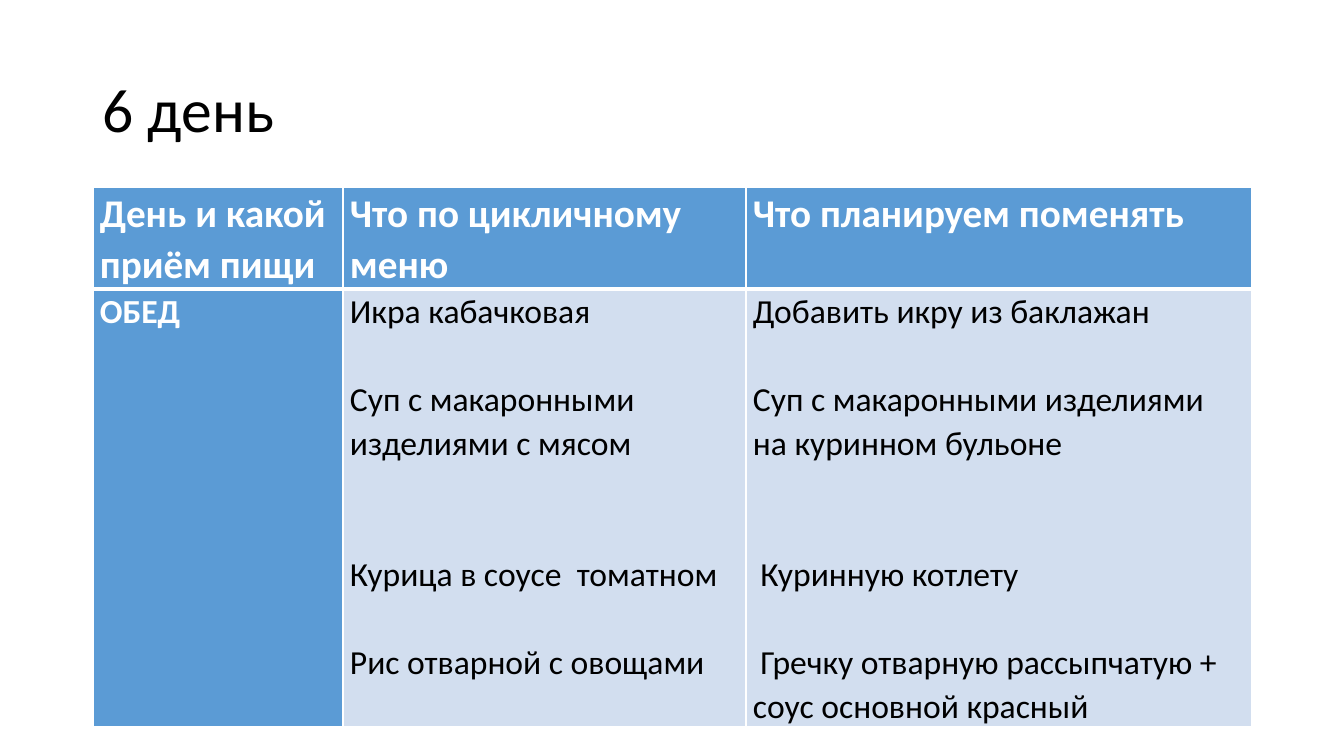
from lxml.etree import SubElement
from pptx import Presentation
from pptx.dml.color import RGBColor
from pptx.enum.text import MSO_ANCHOR as ANCHOR
from pptx.oxml.ns import qn
from pptx.util import Pt

EMU_PER_PX = 914400 / 100.8
BLACK = RGBColor(0x00, 0x00, 0x00)
WHITE = RGBColor(0xFF, 0xFF, 0xFF)
BLUE = RGBColor(0x5B, 0x9B, 0xD5)
PALE = RGBColor(0xD2, 0xDE, 0xEF)

HEADER = {"size": Pt(28), "bold": True, "color": WHITE}
MEAL = {"size": Pt(24), "bold": True, "color": WHITE}
DISH = {"size": Pt(24), "bold": False, "color": BLACK}
LINE_PT = 31.35  # one 24 pt line at 1.07 spacing
INDENT_PT = 5.4  # first-line indent of the last dishes


def px(n):
    return round(n * EMU_PER_PX)


def write(p, text, size, bold, color, spacing=1.07):
    p.line_spacing = spacing
    r = p.add_run()
    r.text = text
    for name, value in {"name": "Calibri", "size": size, "bold": bold}.items():
        setattr(r.font, name, value)
    r.font.color.rgb = color


prs = Presentation()
prs.slide_width, prs.slide_height = px(1344), px(756)
s = prs.slides.add_slide(prs.slide_layouts[6])

# Title
tf = s.shapes.add_textbox(px(93), px(40), px(1159), px(146)).text_frame
tf.word_wrap = True
tf.vertical_anchor = ANCHOR.MIDDLE
write(tf.paragraphs[0], "6 день", Pt(44), False, BLACK, 0.9)

# Menu: each dish is (text, blank lines above, indented)
headers = ["День и какой приём пищи", "Что по цикличному меню", "Что планируем поменять"]
current = [
    ("Икра кабачковая", 0, False),
    ("Суп с макаронными изделиями с мясом", 1, False),
    ("Курица в соусе  томатном", 2, False),
    ("Рис отварной с овощами", 1, False),
]
planned = [
    ("Добавить икру из баклажан", 0, False),
    ("Суп с макаронными изделиями на куринном бульоне", 1, False),
    ("Куринную котлету", 2, True),
    ("Гречку отварную рассыпчатую + соус основной красный", 1, True),
]
rows = [
    [([(text, 0, False)], HEADER, BLUE) for text in headers],
    [([("ОБЕД", 0, False)], MEAL, BLUE), (current, DISH, PALE), (planned, DISH, PALE)],
]

# Table grid
col_widths, row_heights = [250, 403, 506], [102, 438]
table = s.shapes.add_table(
    2, 3, px(93), px(187), px(sum(col_widths)), px(sum(row_heights))
).table
for col, width in zip(table.columns, col_widths):
    col.width = px(width)
for row, height in zip(table.rows, row_heights):
    row.height = px(height)

# Cells
for i, row in enumerate(rows):
    # The rule between header and body is thicker
    borders = {"lnL": 1, "lnR": 1, "lnT": 3 if i else 1, "lnB": 1 if i else 3}
    for j, (lines, style, fill) in enumerate(row):
        cell = table.cell(i, j)
        margins = {"margin_left": px(7), "margin_right": px(7),
                   "margin_top": 0, "margin_bottom": 0}
        for name, value in margins.items():
            setattr(cell, name, value)
        tcPr = cell._tc.get_or_add_tcPr()
        for tag, width in borders.items():
            ln = SubElement(tcPr, qn(f"a:{tag}"), w=str(Pt(width)))
            solid = SubElement(ln, qn("a:solidFill"))
            SubElement(solid, qn("a:srgbClr"), val=str(WHITE))
        cell.fill.solid()
        cell.fill.fore_color.rgb = fill

        tf = cell.text_frame
        for k, (text, gap, indented) in enumerate(lines):
            p = tf.add_paragraph() if k else tf.paragraphs[0]
            write(p, text, **style)
            p.space_before = Pt(gap * LINE_PT)
            if indented:
                p._p.get_or_add_pPr().set("indent", str(Pt(INDENT_PT)))

prs.save("out.pptx")
